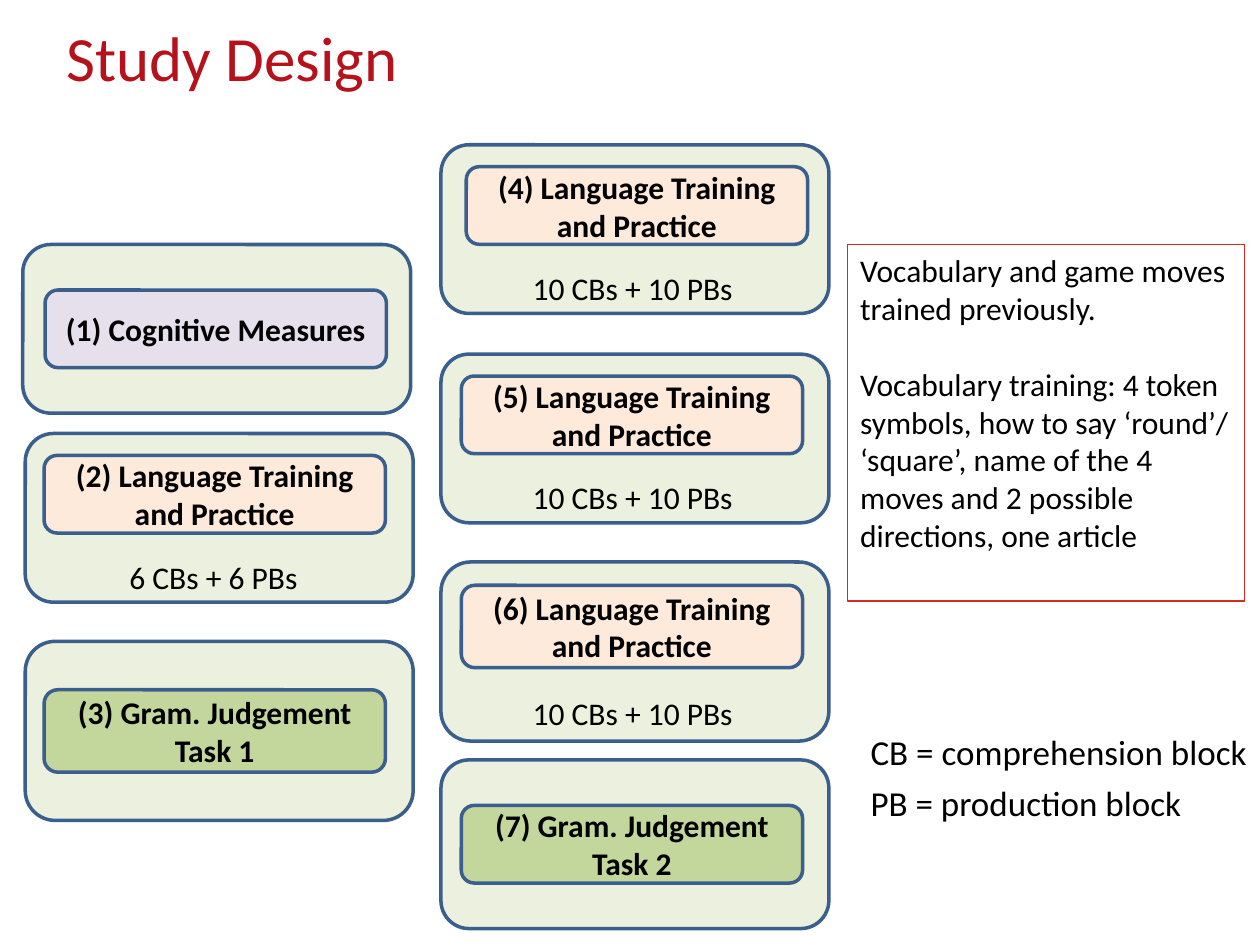
from dataclasses import dataclass

from pptx import Presentation
from pptx.dml.color import RGBColor
from pptx.enum.shapes import MSO_SHAPE
from pptx.enum.text import MSO_ANCHOR, MSO_AUTO_SIZE, PP_ALIGN
from pptx.util import Cm, Pt

BLACK = RGBColor(0x00, 0x00, 0x00)
CRIMSON = RGBColor(0xB5, 0x12, 0x1B)
NOTE_RED = RGBColor(0xD5, 0x2B, 0x1E)
OUTLINE_BLUE = RGBColor(0x3A, 0x5F, 0x8C)
PALE_GREEN = RGBColor(0xEB, 0xF1, 0xDE)
LILAC = RGBColor(0xE6, 0xE0, 0xEC)
PEACH = RGBColor(0xFD, 0xEA, 0xDA)
GREEN = RGBColor(0xC3, 0xD6, 0x9B)

CARD_WIDTH = 7.82
LABEL_WIDTH = 6.88
LABEL_SHARE = 0.46
BLOCKS_SHARE = 0.7
TRAINING = "Language Training and Practice"
JUDGEMENT = "Gram. Judgement Task"


@dataclass
class Session:
    left: float
    top: float
    height: float
    inset: float
    label: str
    fill: RGBColor
    blocks: str = ""
    blocks_left: float = 0
    blocks_width: float = 0

    @property
    def label_share(self):
        return 0.13 if self.blocks else 0.27


SESSIONS = [
    Session(0.46, 4.93, 3.4, 0.45, "(1) Cognitive Measures", LILAC),
    Session(0.51, 8.74, 3.4, 0.38, f"(2) {TRAINING}", PEACH,
            "6 CBs + 6 PBs", 2.36, 3.94),
    Session(0.51, 12.93, 3.61, 0.38, f"(3) {JUDGEMENT} 1", GREEN),
    Session(8.89, 2.92, 3.4, 0.51, f"(4) {TRAINING}", PEACH,
            "10 CBs + 10 PBs", 10.49, 4.57),
    Session(8.89, 7.14, 3.4, 0.41, f"(5) {TRAINING}", PEACH,
            "10 CBs + 10 PBs", 10.49, 4.57),
    Session(8.89, 11.33, 3.61, 0.41, f"(6) {TRAINING}", PEACH,
            "10 CBs + 10 PBs", 10.49, 4.57),
    Session(8.89, 15.32, 3.4, 0.41, f"(7) {JUDGEMENT} 2", GREEN),
]

ABBREVIATIONS = [
    ("CB = comprehension block", 14.61, 8.18),
    ("PB = production block", 15.62, 6.86),
]

VOCABULARY_NOTE = [
    ("Vocabulary and game moves trained previously.", 0),
    ("Vocabulary training: 4 token symbols, how to say ‘round’/", 22),
    ("‘square’, name of the 4 moves and 2 possible directions, one article", 0),
]


def write(paragraph, text, size=18, color=BLACK, bold=False,
          align=PP_ALIGN.LEFT, before=0, line_spacing=None):
    paragraph.text = text
    paragraph.alignment = align
    paragraph.space_before = Pt(before)
    if line_spacing:
        paragraph.line_spacing = Pt(line_spacing)
    font = paragraph.font
    font.name = "Calibri"
    font.size = Pt(size)
    font.bold = bold
    font.color.rgb = color


def add_title(slide, text):
    title = slide.shapes.title
    title.left, title.top = Cm(1.09), Cm(0.53)
    title.width, title.height = Cm(18.8), Cm(3.2)
    title.text_frame.vertical_anchor = MSO_ANCHOR.TOP
    title.text_frame.auto_size = MSO_AUTO_SIZE.NONE
    write(title.text_frame.paragraphs[0], text, size=36, color=CRIMSON,
          line_spacing=35)


def add_rounded_panel(slide, left, top, width, height, fill):
    panel = slide.shapes.add_shape(MSO_SHAPE.ROUNDED_RECTANGLE, Cm(left),
                                   Cm(top), Cm(width), Cm(height))
    panel.shadow.inherit = False
    panel.fill.solid()
    panel.fill.fore_color.rgb = fill
    panel.line.color.rgb = OUTLINE_BLUE
    panel.line.width = Pt(2)
    return panel


def add_line_of_text(slide, left, top, width, height, text, size=18):
    box = slide.shapes.add_textbox(Cm(left), Cm(top), Cm(width), Cm(height))
    box.text_frame.word_wrap = False
    write(box.text_frame.paragraphs[0], text, size=size)


def add_session(slide, session):
    add_rounded_panel(slide, session.left, session.top, CARD_WIDTH,
                      session.height, PALE_GREEN)
    label = add_rounded_panel(
        slide, session.left + session.inset,
        session.top + session.label_share * session.height,
        LABEL_WIDTH, LABEL_SHARE * session.height, session.fill)
    label.text_frame.vertical_anchor = MSO_ANCHOR.MIDDLE
    write(label.text_frame.paragraphs[0], session.label, bold=True,
          align=PP_ALIGN.CENTER)
    if session.blocks:
        add_line_of_text(slide, session.blocks_left,
                         session.top + BLOCKS_SHARE * session.height,
                         session.blocks_width, 0.8, session.blocks)


def add_vocabulary_note(slide):
    note = slide.shapes.add_textbox(Cm(17.09), Cm(4.93), Cm(8), Cm(7.19))
    note.line.color.rgb = NOTE_RED
    note.line.width = Pt(0.75)
    frame = note.text_frame
    frame.word_wrap = True
    for index, (text, before) in enumerate(VOCABULARY_NOTE):
        paragraph = frame.add_paragraph() if index else frame.paragraphs[0]
        write(paragraph, text, before=before)


def main():
    presentation = Presentation()
    presentation.slide_width = Cm(25.4)
    presentation.slide_height = Cm(19.05)
    slide = presentation.slides.add_slide(presentation.slide_layouts[5])
    add_title(slide, "Study Design")
    for session in SESSIONS:
        add_session(slide, session)
    for text, top, width in ABBREVIATIONS:
        add_line_of_text(slide, 17.3, top, width, 1.12, text, size=20)
    add_vocabulary_note(slide)
    presentation.save("out.pptx")


if __name__ == "__main__":
    main()
